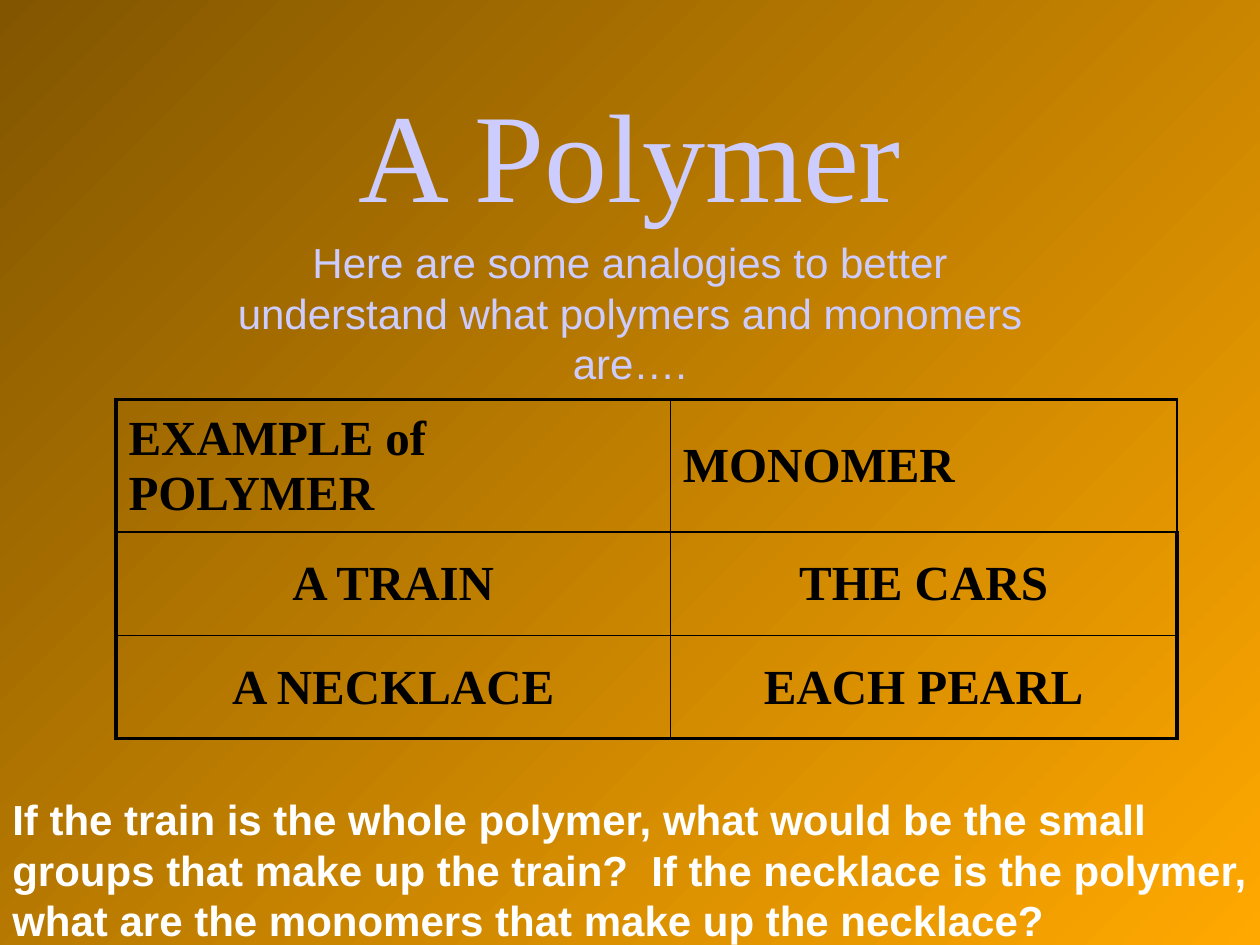
import pptx
import pptx.util
import pptx.dml.color
import pptx.enum.text
import pptx.oxml
import pptx.oxml.ns

RGB = pptx.dml.color.RGBColor
ALIGN = pptx.enum.text.PP_ALIGN
ANCHOR = pptx.enum.text.MSO_ANCHOR
SIZE = pptx.enum.text.MSO_AUTO_SIZE

GOLD = RGB(0xFF, 0xA8, 0x00)
BROWN = RGB(0x82, 0x56, 0x00)
LILAC = RGB(0xCC, 0xCC, 0xFF)
WHITE = RGB(0xFF, 0xFF, 0xFF)
BLACK = RGB(0x00, 0x00, 0x00)

SERIF = "Times New Roman"
SANS = "Arial"
SCALE = 9144
THIN, THICK = 1, 2.25

ROWS = [
    ("EXAMPLE of POLYMER", "MONOMER"),
    ("A TRAIN", "THE CARS"),
    ("A NECKLACE", "EACH PEARL"),
]
WIDTHS = (440, 402)
HEIGHTS = (105, 82, 82)


def emu(box):
    return [px * SCALE for px in box]


def apply(target, values):
    for name, value in values.items():
        setattr(target, name, value)


def write(frame, text, size, face, color, bold=False, **para):
    line = frame.paragraphs[0]
    apply(line, {"text": text, **para})
    font = line.runs[0].font
    apply(font, {"size": pptx.util.Pt(size), "name": face, "bold": bold})
    font.color.rgb = color


def paint(slide):
    fill = slide.background.fill
    fill.gradient()
    fill.gradient_angle = 135
    for stop, color in zip(fill.gradient_stops, (GOLD, BROWN)):
        stop.color.rgb = color


def add_title(slide, box):
    title = slide.shapes.title
    apply(title, dict(zip(("left", "top", "width", "height"), emu(box))))
    apply(title.text_frame, {
        "auto_size": SIZE.NONE,
        "word_wrap": True,
        "vertical_anchor": ANCHOR.MIDDLE,
    })
    write(title.text_frame, "A Polymer", 72, SERIF, LILAC,
          alignment=ALIGN.CENTER)


def add_note(slide, box, text, color, bold, align):
    frame = slide.shapes.add_textbox(*emu(box)).text_frame
    apply(frame, {"word_wrap": True, "auto_size": SIZE.SHAPE_TO_FIT_TEXT})
    write(frame, text, 24, SANS, color, bold, alignment=align)


def edge(cell, sides):
    props = cell._tc.get_or_add_tcPr()
    for spot, (side, width) in enumerate(sides.items()):
        line = pptx.oxml.parse_xml(
            f'<a:ln{side} {pptx.oxml.ns.nsdecls("a")} '
            f'w="{pptx.util.Pt(width)}"><a:solidFill>'
            f'<a:srgbClr val="{BLACK}"/></a:solidFill></a:ln{side}>')
        props.insert(spot, line)


def add_grid(slide, box):
    table = slide.shapes.add_table(len(ROWS), len(WIDTHS), *emu(box)).table
    apply(table, {"first_row": False, "horz_banding": False})
    for col, width in zip(table.columns, emu(WIDTHS)):
        col.width = width
    for row, height in zip(table.rows, emu(HEIGHTS)):
        row.height = height
    last = len(ROWS) - 1
    for r, words in enumerate(ROWS):
        for c, text in enumerate(words):
            cell = table.cell(r, c)
            cell.fill.background()
            cell.vertical_anchor = ANCHOR.MIDDLE
            write(cell.text_frame, text, 28, SERIF, BLACK, True,
                  alignment=ALIGN.CENTER if r else ALIGN.LEFT,
                  line_spacing=1.02)
            edge(cell, {
                "L": THIN if c else THICK,
                "R": THICK if c and r else THIN,
                "T": THIN if r else THICK,
                "B": THICK if r == last else THIN,
            })


def main():
    deck = pptx.Presentation()
    apply(deck, {"slide_width": 1000 * SCALE, "slide_height": 750 * SCALE})
    slide = deck.slides.add_slide(deck.slide_layouts[5])
    paint(slide)
    add_title(slide, (254, 56, 492, 130))
    add_note(slide, (178, 183, 644, 130),
             "Here are some analogies to better understand what polymers "
             "and monomers are….", LILAC, False, ALIGN.CENTER)
    add_grid(slide, (92, 317, sum(WIDTHS), sum(HEIGHTS)))
    add_note(slide, (0, 625, 1000, 170),
             "If the train is the whole polymer, what would be the small "
             "groups that make up the train?  If the necklace is the polymer, "
             "what are the monomers that make up the necklace?",
             WHITE, True, ALIGN.LEFT)
    deck.save("out.pptx")


if __name__ == "__main__":
    main()
